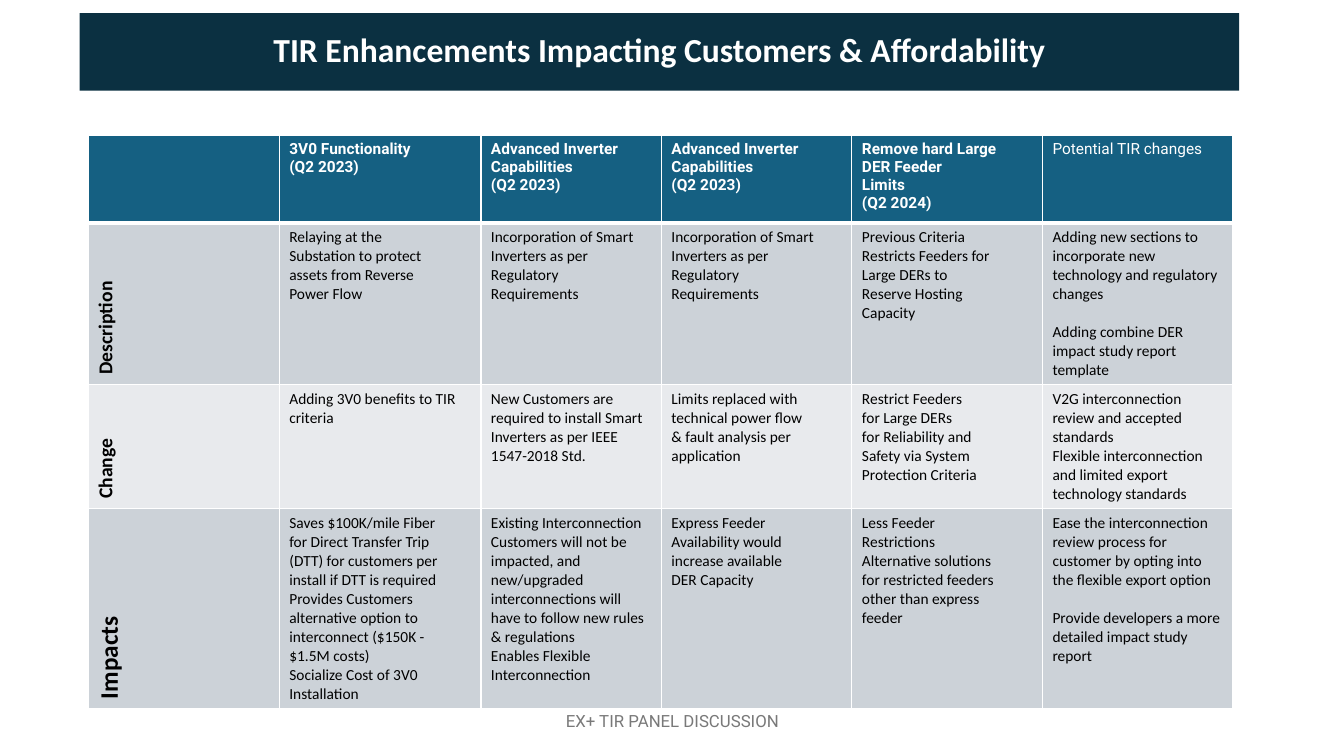
"""Build a slide with a table of TIR enhancements."""
from lxml import etree
from pptx import Presentation
from pptx.dml.color import RGBColor
from pptx.enum.text import MSO_ANCHOR, MSO_AUTO_SIZE, PP_ALIGN
from pptx.oxml.ns import qn
from pptx.util import Inches, Pt

MIDDLE = MSO_ANCHOR.MIDDLE
NO_FIT = MSO_AUTO_SIZE.NONE
LEFT, CENTER = PP_ALIGN.LEFT, PP_ALIGN.CENTER

WHITE = RGBColor(0xFF, 0xFF, 0xFF)
BLACK = RGBColor(0, 0, 0)
NAVY = RGBColor(0x0B, 0x30, 0x41)
TEAL = RGBColor(0x15, 0x60, 0x82)
DARK = RGBColor(0xCC, 0xD2, 0xD8)
LIGHT = RGBColor(0xE8, 0xEA, 0xED)
GRAY = RGBColor(0x79, 0x79, 0x79)

COLS = [1.89, 2, 1.79, 1.89, 1.89, 1.89]
ROWS = [0.87, 1.52, 1.16, 1.87]
FILLS = [TEAL, DARK, LIGHT, DARK]
SIDES = [14, 14, 14, 18]

SMART = "Incorporation of Smart\nInverters as per\nRegulatory\nRequirements"
INVERT = "Advanced Inverter\nCapabilities\n(Q2 2023)"
CELLS = [
    ["", "3V0 Functionality\n(Q2 2023)", INVERT, INVERT,
     "Remove hard Large\nDER Feeder\nLimits\n(Q2 2024)",
     "Potential TIR changes"],
    ["Description",
     "Relaying at the\nSubstation to protect\nassets from Reverse\nPower Flow",
     SMART, SMART,
     "Previous Criteria\nRestricts Feeders for\nLarge DERs to\n"
     "Reserve Hosting\nCapacity",
     "Adding new sections to incorporate new technology and regulatory "
     "changes\n\nAdding combine DER impact study report template"],
    ["Change",
     "Adding 3V0 benefits to TIR criteria",
     "New Customers are\nrequired to install Smart\nInverters as per IEEE\n"
     "1547-2018 Std.",
     "Limits replaced with\ntechnical power flow\n& fault analysis per\n"
     "application",
     "Restrict Feeders\nfor Large DERs\nfor Reliability and\n"
     "Safety via System\nProtection Criteria",
     "V2G interconnection review and accepted standards\n"
     "Flexible interconnection and limited export technology standards"],
    ["Impacts",
     "Saves $100K/mile Fiber\nfor Direct Transfer Trip\n"
     "(DTT) for customers per\ninstall if DTT is required\n"
     "Provides Customers\nalternative option to\ninterconnect ($150K -\n"
     "$1.5M costs)\nSocialize Cost of 3V0\nInstallation",
     "Existing Interconnection\nCustomers will not be\nimpacted, and\n"
     "new/upgraded\ninterconnections will\nhave to follow new rules\n"
     "& regulations\nEnables Flexible\nInterconnection",
     "Express Feeder\nAvailability would\nincrease available\nDER Capacity",
     "Less Feeder\nRestrictions\nAlternative solutions\n"
     "for restricted feeders\nother than express\nfeeder",
     "Ease the interconnection review process for customer by opting into "
     "the flexible export option\n\n"
     "Provide developers a more detailed impact study report"],
]


def write(frame, text, size=11, font="Calibri", color=BLACK, bold=False,
          align=LEFT, lead=None):
    """Fill a frame line by line, with a gap where a line is empty."""
    para = None
    gap = False
    for line in text.split("\n"):
        if text and not line:
            gap = True
            continue
        para = frame.add_paragraph() if para else frame.paragraphs[0]
        para.alignment = align
        if lead:
            para.line_spacing = lead
        if gap:
            para.space_before = Pt(size * 1.22)
            gap = False
        para.font.size = Pt(size)
        if line:
            run = para.add_run()
            run.text = line
            run.font.size = Pt(size)
            run.font.name = font
            run.font.bold = bold
            run.font.color.rgb = color


def edge(cell, base):
    """Draw white cell borders, with the given width at the base."""
    props = cell._tc.get_or_add_tcPr()
    for side, width in zip("LRTB", (1, 1, 1, base)):
        line = etree.SubElement(props, qn(f"a:ln{side}"), w=str(Pt(width)))
        fill = etree.SubElement(line, qn("a:solidFill"))
        etree.SubElement(fill, qn("a:srgbClr"), val=str(WHITE))


class Deck:
    """Hold the style and the current slide."""

    def __init__(self):
        """Start a wide deck with one title-only slide."""
        self.show = Presentation()
        self.show.slide_width = Inches(13.33)
        self.show.slide_height = Inches(7.5)
        self.slide = self.show.slides.add_slide(self.show.slide_layouts[5])

    def title(self, text, left, top, width, height):
        """Place the title on its dark band."""
        band = self.slide.shapes.title
        band.left, band.top = Inches(left), Inches(top)
        band.width, band.height = Inches(width), Inches(height)
        band.fill.solid()
        band.fill.fore_color.rgb = NAVY
        band.text_frame.auto_size = NO_FIT
        band.text_frame.vertical_anchor = MIDDLE
        write(band.text_frame, text, size=24, color=WHITE, bold=True,
              align=CENTER, lead=0.9)

    def table(self, left, top):
        """Add the table of enhancements."""
        grid = self.slide.shapes.add_table(
            len(ROWS), len(COLS), Inches(left), Inches(top),
            Inches(sum(COLS)), Inches(sum(ROWS))).table
        for col, width in zip(grid.columns, COLS):
            col.width = Inches(width)
        for row, height in zip(grid.rows, ROWS):
            row.height = Inches(height)
        for r, texts in enumerate(CELLS):
            for c, text in enumerate(texts):
                self.cell(grid.cell(r, c), text, r, c)

    def cell(self, cell, text, r, c):
        """Style and fill one cell by its row and column."""
        edge(cell, 1 if r else 3)
        cell.fill.solid()
        cell.fill.fore_color.rgb = FILLS[r]
        if r == 0:
            write(cell.text_frame, text, font="Roboto", color=WHITE,
                  bold=c < len(COLS) - 1)
        elif c == 0:
            cell._tc.get_or_add_tcPr().set("vert", "vert270")
            write(cell.text_frame, text, size=SIDES[r], bold=True)
        else:
            write(cell.text_frame, text)

    def label(self, text, left, top, width, height):
        """Add a centred line of small grey text."""
        box = self.slide.shapes.add_textbox(
            Inches(left), Inches(top), Inches(width), Inches(height))
        box.text_frame.word_wrap = True
        box.text_frame.vertical_anchor = MIDDLE
        write(box.text_frame, text, size=12, font="Roboto", color=GRAY,
              align=CENTER)


def main():
    """Build and save the slide."""
    deck = Deck()
    deck.title("TIR Enhancements Impacting Customers & Affordability",
               0.79, 0.13, 11.5, 0.77)
    deck.table(0.88, 1.34)
    deck.label("EX+ TIR PANEL DISCUSSION", 4.42, 6.95, 4.5, 0.4)
    deck.show.save("out.pptx")


if __name__ == "__main__":
    main()
